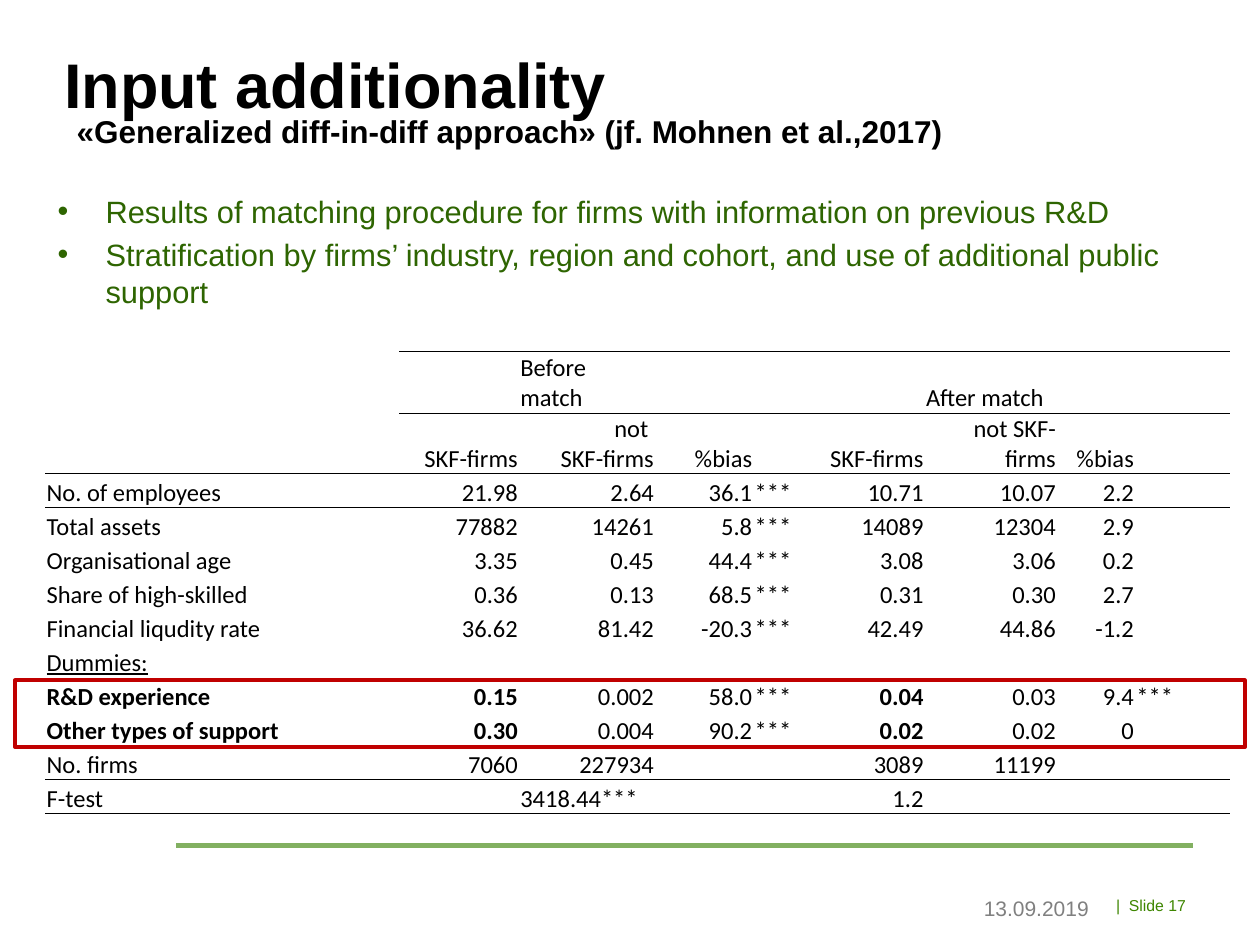
from dataclasses import dataclass

from lxml import etree
from pptx import Presentation
from pptx import util as u
from pptx.dml import color
from pptx.enum import shapes, text
from pptx.oxml import ns


@dataclass(frozen=True)
class Theme:
    black: str = "000000"
    body_green: str = "2E6501"
    number_green: str = "3E8601"
    rule_green: str = "82B061"
    grey: str = "808080"
    red: str = "C00000"
    heading_font: str = "Arial"
    table_font: str = "Calibri"
    title_size: float = 36
    subtitle_size: float = 18
    bullet_size: float = 17.6
    table_size: float = 14
    date_size: float = 12
    number_size: float = 9


theme = Theme()
LEFT, RIGHT = text.PP_ALIGN.LEFT, text.PP_ALIGN.RIGHT


def add_span(para, words, size, hue, font=theme.heading_font, bold=False):
    span = para.add_run()
    span.text = words
    span.font.name = font
    span.font.size = u.Pt(size)
    span.font.bold = bold
    span.font.color.rgb = color.RGBColor.from_string(hue)
    return span


def add_edge(cell, side):
    edge = etree.SubElement(cell._tc.get_or_add_tcPr(), ns.qn(f"a:{side}"), w="6350")
    fill = etree.SubElement(edge, ns.qn("a:solidFill"))
    etree.SubElement(fill, ns.qn("a:srgbClr"), val=theme.black)


deck = Presentation()
deck.slide_width, deck.slide_height = u.Inches(10), u.Inches(7.5)
page = deck.slides.add_slide(deck.slide_layouts[6])

rule = page.shapes.add_connector(
    shapes.MSO_CONNECTOR.STRAIGHT, u.Inches(1.4), u.Inches(6.71), u.Inches(9.47), u.Inches(6.71))
rule.line.color.rgb = color.RGBColor.from_string(theme.rule_green)
rule.line.width = u.Pt(3)
etree.SubElement(rule._element.spPr, ns.qn("a:effectLst"))

labels = [
    ("Input additionality", (0.51, 0.32, 9.09, 0.55), (0, 0.04),
     theme.title_size, theme.black, True, LEFT),
    ("«Generalized diff-in-diff approach» (jf. Mohnen et al.,2017)", (0.51, 0.84, 9, 0.39), (0.1, 0.05),
     theme.subtitle_size, theme.black, True, LEFT),
    ("13.09.2019", (7.71, 7.06, 1.07, 0.31), (0.1, 0.05),
     theme.date_size, theme.grey, False, LEFT),
    ("|  Slide 17", (8.6, 7.06, 0.91, 0.25), (0.1, 0.05),
     theme.number_size, theme.number_green, False, RIGHT),
]
for words, place, (side_inset, top_inset), size, hue, bold, align in labels:
    box = page.shapes.add_textbox(*map(u.Inches, place))
    frame = box.text_frame
    frame.word_wrap = True
    frame.margin_left = frame.margin_right = u.Inches(side_inset)
    frame.margin_top = frame.margin_bottom = u.Inches(top_inset)
    para = frame.paragraphs[0]
    para.alignment = align
    add_span(para, words, size, hue, bold=bold)

bullets = [
    "Results of matching procedure for firms with information on previous R&D",
    "Stratification by firms’ industry, region and cohort, and use of additional public support",
]
box = page.shapes.add_textbox(u.Inches(0.36), u.Inches(1.48), u.Inches(9), u.Inches(0.98))
frame = box.text_frame
frame.word_wrap = True
for index, words in enumerate(bullets):
    para = frame.add_paragraph() if index else frame.paragraphs[0]
    props = para._p.get_or_add_pPr()
    props.set("marL", str(u.Inches(0.38)))
    props.set("indent", str(-u.Inches(0.38)))
    etree.SubElement(props, ns.qn("a:buFont"), typeface=theme.heading_font)
    etree.SubElement(props, ns.qn("a:buChar"), char="•")
    if index:
        para.space_before = u.Pt(3.5)
    add_span(para, words, theme.bullet_size, theme.body_green)

rows = [
    ["", "", "Before match", "", "", "", "After match", "", ""],
    ["", "SKF-firms", "not \nSKF-firms", "%bias", "", "SKF-firms", "not SKF-firms", "%bias", ""],
    ["No. of employees", "21.98", "2.64", "36.1", "***", "10.71", "10.07", "2.2", ""],
    ["Total assets", "77882", "14261", "5.8", "***", "14089", "12304", "2.9", ""],
    ["Organisational age", "3.35", "0.45", "44.4", "***", "3.08", "3.06", "0.2", ""],
    ["Share of high-skilled", "0.36", "0.13", "68.5", "***", "0.31", "0.30", "2.7", ""],
    ["Financial liqudity rate", "36.62", "81.42", "-20.3", "***", "42.49", "44.86", "-1.2", ""],
    ["Dummies:", "", "", "", "", "", "", "", ""],
    ["R&D experience", "0.15", "0.002", "58.0", "***", "0.04", "0.03", "9.4", "***"],
    ["Other types of support", "0.30", "0.004", "90.2", "***", "0.02", "0.02", "0", ""],
    ["No. firms", "7060", "227934", "", "", "3089", "11199", "", ""],
    ["F-test", "", "3418.44***", "", "", "1.2", "", "", ""],
]
widths = [2.81, 0.95, 1.08, 0.78, 0.41, 0.95, 1.05, 0.62, 0.75]
heights = [0.49, 0.48] + [0.27] * 10
left_columns = {0, 4, 8}
left_words = {"Before match", "After match", "3418.44***"}
bold_rows, bold_columns = {8, 9}, {0, 1, 5}
ruled_below = {0, 1, 9, 11}

holder = page.shapes.add_table(
    len(rows), len(widths), u.Inches(0.36), u.Inches(2.79), u.Inches(9.42), u.Inches(3.69))
table = holder.table
table.first_row = table.horz_banding = False
style = table._tbl.tblPr.find(ns.qn("a:tableStyleId"))
style.text = "{2D5ABB26-0587-4C30-8999-92F81FD0307C}"
for column, width in zip(table.columns, widths):
    column.width = u.Inches(width)
for row, height in zip(table.rows, heights):
    row.height = u.Inches(height)

for r, values in enumerate(rows):
    for c, value in enumerate(values):
        cell = table.cell(r, c)
        cell.margin_left = cell.margin_right = cell.margin_top = u.Inches(0.01)
        cell.margin_bottom = 0
        cell.vertical_anchor = text.MSO_ANCHOR.BOTTOM
        if (r - 1 in ruled_below or r == 0) and (c or r > 1):
            add_edge(cell, "lnT")
        if r in ruled_below and (c or r):
            add_edge(cell, "lnB")
        cell.fill.background()
        for index, words in enumerate(value.split("\n")):
            frame = cell.text_frame
            para = frame.add_paragraph() if index else frame.paragraphs[0]
            para.alignment = LEFT if c in left_columns or value in left_words else RIGHT
            if words:
                span = add_span(para, words, theme.table_size, theme.black, theme.table_font,
                                r in bold_rows and c in bold_columns)
                span.font.underline = words == "Dummies:"
            else:
                etree.SubElement(para._p, ns.qn("a:endParaRPr"), sz=str(theme.table_size * 100))

frame_box = page.shapes.add_shape(
    shapes.MSO_SHAPE.RECTANGLE, u.Inches(0.12), u.Inches(5.4), u.Inches(9.76), u.Inches(0.53))
frame_box.shadow.inherit = False
frame_box.fill.background()
frame_box.line.color.rgb = color.RGBColor.from_string(theme.red)
frame_box.line.width = u.Pt(2.25)

deck.save("out.pptx")
